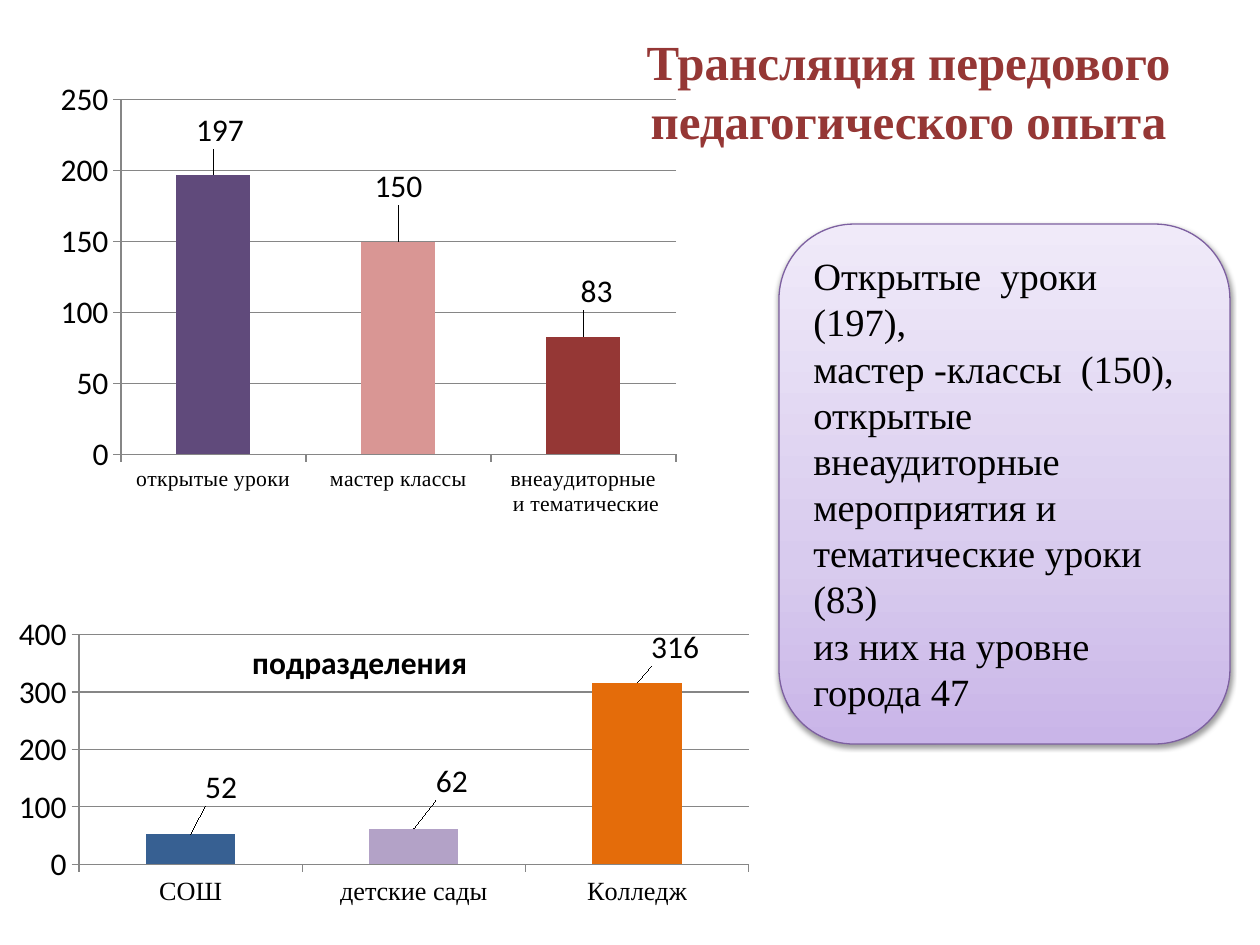
import pptx
import pptx.util
import pptx.chart.data
import pptx.dml.color
import pptx.enum.chart
import pptx.enum.shapes
import pptx.enum.text
import pptx.oxml
import pptx.oxml.ns

HUES = {
    "ink": "000000", "red": "953735", "plum": "604A7B", "rose": "D99694",
    "blue": "376092", "lilac": "B3A2C7", "gold": "E46C0A", "grid": "868686",
    "edge": "7D60A0", "deep": "C9B5E8", "mid": "D8CBEE", "pale": "F0EAF9",
}
SERIF, SANS = "Times New Roman", "Calibri"
HEAD = "Трансляция передового педагогического опыта"
HEAD_BOX = (587, 10, 643, 161)
NOTES = [
    "Открытые  уроки (197),",
    "мастер -классы  (150), открытые внеаудиторные мероприятия и тематические уроки (83)",
    "из них на уровне города 47",
]
NOTE_BOX = (779, 224, 451, 520)
STOPS = [(0, "deep"), (35, "mid"), (100, "pale")]
CHARTS = [
    {
        "box": (35, 37, 661, 522), "name": "Series 1", "title": None,
        "bars": [
            ("открытые уроки", 197, "plum", (0.01, -0.04)),
            ("мастер классы", 150, "rose", (0, -0.06)),
            ("внеаудиторные\n и тематические", 83, "red", (0.02, -0.04)),
        ],
        "plot": (0.13, 0.12, 0.84, 0.68), "top": 250, "step": 50, "size": 12.4,
    },
    {
        "box": (3, 522, 761, 389), "name": "подразделения", "title": (0.32, 0.29),
        "bars": [
            ("СОШ", 52, "blue", (0.04, -0.06)),
            ("детские сады", 62, "lilac", (0.05, -0.06)),
            ("Колледж", 316, "gold", (0.05, -0.03)),
        ],
        "plot": (0.1, 0.29, 0.88, 0.59), "top": 400, "step": 100, "size": 15,
    },
]


def px(n):
    return round(n * 914400 / 126)


def hue(key):
    return pptx.dml.color.RGBColor.from_string(HUES[key])


def put(obj, vals):
    for key, val in vals.items():
        setattr(obj, key, val)


def font(obj, name, size, tone="ink", bold=False):
    put(obj, {"name": name, "size": pptx.util.Pt(size), "bold": bold})
    obj.color.rgb = hue(tone)


def paint(fill, tone):
    fill.solid()
    fill.fore_color.rgb = hue(tone)


def stroke(line, tone):
    line.color.rgb = hue(tone)
    line.width = pptx.util.Pt(0.75)


def node(body, space="a"):
    names = pptx.oxml.ns.nsdecls(space)
    tag, rest = body.split(">", 1)
    return pptx.oxml.parse_xml(f"{tag} {names}>{rest}")


def layout(spots, edge=False, inner=False):
    rows = '<c:layoutTarget val="inner"/>' if inner else ""
    if edge:
        rows += '<c:xMode val="edge"/><c:yMode val="edge"/>'
    rows += "".join(f'<c:{key} val="{val}"/>' for key, val in zip("xywh", spots))
    return node(f"<c:layout><c:manualLayout>{rows}</c:manualLayout></c:layout>", "c")


def place(root, query, item, at):
    home = root.xpath(query)[0]
    for old in home.xpath("./c:layout"):
        home.remove(old)
    home.insert(at, item)


def write(frame, rows, size, tone, bold, align):
    frame.word_wrap = True
    for i, row in enumerate(rows):
        para = frame.paragraphs[0] if i == 0 else frame.add_paragraph()
        para.alignment = align
        run = para.add_run()
        run.text = row
        font(run.font, SERIF, size, tone, bold)


def draw_chart(slide, item):
    data = pptx.chart.data.CategoryChartData()
    data.categories = [bar[0] for bar in item["bars"]]
    data.add_series(item["name"], [bar[1] for bar in item["bars"]])
    kind = pptx.enum.chart.XL_CHART_TYPE.COLUMN_CLUSTERED
    chart = slide.shapes.add_chart(kind, *map(px, item["box"]), data).chart
    put(chart, {"has_legend": False, "has_title": bool(item["title"])})
    font(chart.font, SANS, 18)
    root = chart.element
    place(root, ".//c:plotArea", layout(item["plot"], True, True), 0)
    if item["title"]:
        frame = chart.chart_title.text_frame
        frame.text = item["name"]
        font(frame.paragraphs[0].runs[0].font, SANS, 18, bold=True)
        place(root, "./c:chart/c:title", layout(item["title"], True), 1)
        for old in root.xpath("./c:chart/c:title/c:overlay"):
            old.set("val", "1")
    plot = chart.plots[0]
    put(plot, {"gap_width": 150, "vary_by_categories": False, "has_data_labels": True})
    put(plot.data_labels, {"show_value": True})
    series = plot.series[0]
    paint(series.format.fill, "rose")
    for i, (_, _, tone, shift) in enumerate(item["bars"]):
        point = series.points[i]
        paint(point.format.fill, tone)
        point.data_label.position = pptx.enum.chart.XL_LABEL_POSITION.OUTSIDE_END
        place(root, f".//c:dLbl[c:idx/@val='{i}']", layout(shift), 1)
    out = pptx.enum.chart.XL_TICK_MARK.OUTSIDE
    none = pptx.enum.chart.XL_TICK_MARK.NONE
    for axis in (chart.category_axis, chart.value_axis):
        put(axis, {"major_tick_mark": out, "minor_tick_mark": none})
        stroke(axis.format.line, "grid")
    font(chart.category_axis.tick_labels.font, SERIF, item["size"])
    font(chart.value_axis.tick_labels.font, SANS, 18)
    put(chart.value_axis, {
        "minimum_scale": 0, "maximum_scale": item["top"],
        "major_unit": item["step"], "has_major_gridlines": True,
    })
    stroke(chart.value_axis.major_gridlines.format.line, "grid")


def draw_note(slide):
    kind = pptx.enum.shapes.MSO_SHAPE.ROUNDED_RECTANGLE
    card = slide.shapes.add_shape(kind, *map(px, NOTE_BOX))
    card.shadow.inherit = False
    card.fill.gradient()
    card.fill.gradient_angle = 90
    props = card.element.spPr
    ramp = props.xpath(".//a:gsLst")[0]
    for old in list(ramp):
        ramp.remove(old)
    for pos, tone in STOPS:
        ramp.append(node(f'<a:gs pos="{pos * 1000}"><a:srgbClr val="{HUES[tone]}"/></a:gs>'))
    stroke(card.line, "edge")
    props.xpath("./a:effectLst")[0].append(node(
        '<a:outerShdw blurRad="39370" dist="20320" dir="5400000" rotWithShape="0">'
        '<a:srgbClr val="000000"><a:alpha val="38000"/></a:srgbClr></a:outerShdw>'))
    put(card.text_frame, {
        "vertical_anchor": pptx.enum.text.MSO_ANCHOR.TOP,
        "auto_size": pptx.enum.text.MSO_AUTO_SIZE.SHAPE_TO_FIT_TEXT,
    })
    write(card.text_frame, NOTES, 22, "ink", False, pptx.enum.text.PP_ALIGN.LEFT)


def main():
    deck = pptx.Presentation()
    put(deck, {"slide_width": px(1260), "slide_height": px(945)})
    slide = deck.slides.add_slide(deck.slide_layouts[6])
    head = slide.shapes.add_textbox(*map(px, HEAD_BOX)).text_frame
    head.vertical_anchor = pptx.enum.text.MSO_ANCHOR.MIDDLE
    write(head, [HEAD], 28, "red", True, pptx.enum.text.PP_ALIGN.CENTER)
    draw_note(slide)
    for item in CHARTS:
        draw_chart(slide, item)
    deck.save("out.pptx")


if __name__ == "__main__":
    main()
